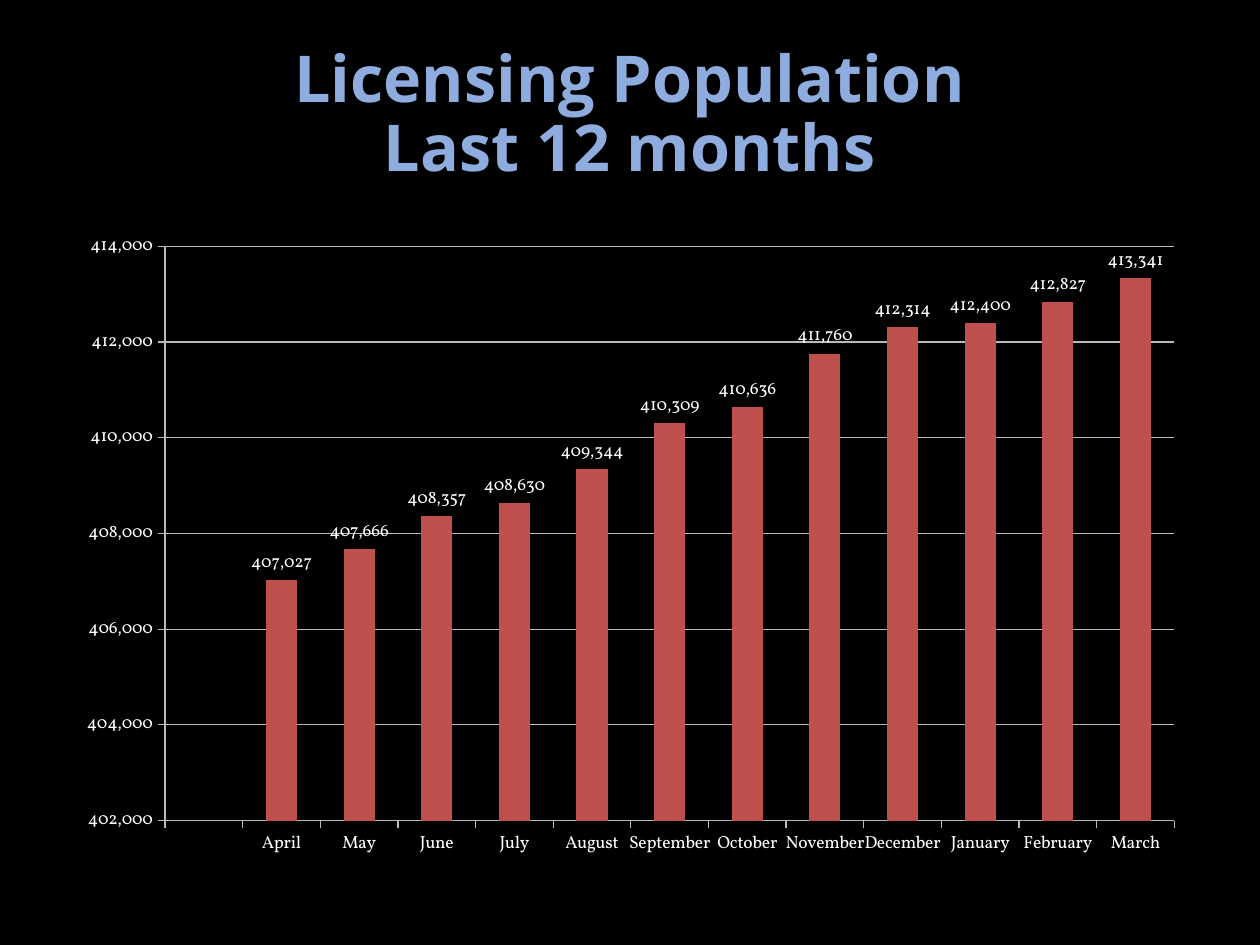
from lxml import etree
from pptx import Presentation
from pptx.chart.data import CategoryChartData
from pptx.dml.color import RGBColor
from pptx.enum.chart import XL_CHART_TYPE, XL_LABEL_POSITION, XL_TICK_MARK
from pptx.enum.text import MSO_ANCHOR, MSO_AUTO_SIZE, PP_ALIGN
from pptx.oxml.ns import qn
from pptx.util import Inches, Pt

COLUMNS = XL_CHART_TYPE.COLUMN_CLUSTERED
ABOVE_BAR = XL_LABEL_POSITION.OUTSIDE_END
TICK_OUT, TICK_NONE = XL_TICK_MARK.OUTSIDE, XL_TICK_MARK.NONE
MIDDLE, CENTER = MSO_ANCHOR.MIDDLE, PP_ALIGN.CENTER
NO_AUTOFIT = MSO_AUTO_SIZE.NONE

COLORS = {"background": "000000", "title": "8FACDE", "text": "FFFFFF",
          "line": "B9B9B9", "bar": "C0504D"}
TITLE_FONT, CHART_FONT = "Open Sans", "Vollkorn"
NUMBER_FORMAT = "#,##0"
TITLE_ONLY = 5
WIDTH, HEIGHT = Inches(10), Inches(7.5)

TITLE_BOX = (Inches(0.5), Inches(0.3), Inches(9), Inches(1.25))
CHART_BOX = (Inches(0.5), Inches(1.75), Inches(9), Inches(5.15))
# Inner plot area as shares of the chart box
PLOT_SHARES = {"x": 0.09, "y": 0.04, "w": 0.89, "h": 0.885}

# The first category is an empty slot before April
POPULATION = {
    "": None, "April": 407027, "May": 407666, "June": 408357,
    "July": 408630, "August": 409344, "September": 410309,
    "October": 410636, "November": 411760, "December": 412314,
    "January": 412400, "February": 412827, "March": 413341,
}


def color(name):
    return RGBColor.from_string(COLORS[name])


def style_font(font, name, size, color_name, bold=False):
    font.name, font.size, font.bold = name, Pt(size), bold
    font.color.rgb = color(color_name)


def style_line(line):
    line.color.rgb = color("line")
    line.width = Pt(0.75)


def add_title(page, box, text):
    title = page.shapes.title
    title.left, title.top, title.width, title.height = box
    frame = title.text_frame
    frame.auto_size = NO_AUTOFIT
    frame.word_wrap = True
    frame.vertical_anchor = MIDDLE
    frame.text = text
    para = frame.paragraphs[0]
    para.alignment = CENTER
    para.line_spacing = 0.89
    style_font(para.font, TITLE_FONT, 36.9, "title", bold=True)


def place_plot(chart, shares):
    """Fix the inner plot area inside the chart box."""
    plot_area = chart.plots[0]._element.getparent()
    for old in plot_area.findall(qn("c:layout")):
        plot_area.remove(old)
    layout = etree.Element(qn("c:layout"))
    plot_area.insert(0, layout)
    manual = etree.SubElement(layout, qn("c:manualLayout"))
    settings = {"layoutTarget": "inner", "xMode": "edge", "yMode": "edge", **shares}
    for tag, value in settings.items():
        etree.SubElement(manual, qn(f"c:{tag}")).set("val", str(value))


def add_population_chart(page, box, population):
    data = CategoryChartData(number_format=NUMBER_FORMAT)
    data.categories = list(population)
    data.add_series("Series 1", list(population.values()))
    chart = page.shapes.add_chart(COLUMNS, *box, data).chart
    chart.has_legend = False
    chart.has_title = False
    style_font(chart.font, CHART_FONT, 10, "text")
    place_plot(chart, PLOT_SHARES)

    # Axes
    for axis in (chart.category_axis, chart.value_axis):
        axis.major_tick_mark = TICK_OUT
        axis.minor_tick_mark = TICK_NONE
        style_line(axis.format.line)
        style_font(axis.tick_labels.font, CHART_FONT, 10, "text")
    values = chart.value_axis
    values.minimum_scale, values.maximum_scale = 402000, 414000
    values.major_unit = 2000
    values.has_major_gridlines = True
    style_line(values.major_gridlines.format.line)
    values.tick_labels.number_format = NUMBER_FORMAT
    values.tick_labels.number_format_is_linked = False

    # Bars and their values
    plot = chart.plots[0]
    plot.gap_width = 150
    plot.vary_by_categories = False
    series = plot.series[0]
    series.format.fill.solid()
    series.format.fill.fore_color.rgb = color("bar")
    labels = series.data_labels
    labels.show_value = True
    labels.position = ABOVE_BAR
    labels.number_format = NUMBER_FORMAT
    labels.number_format_is_linked = False
    style_font(labels.font, CHART_FONT, 10, "text")


def main():
    deck = Presentation()
    deck.slide_width, deck.slide_height = WIDTH, HEIGHT
    page = deck.slides.add_slide(deck.slide_layouts[TITLE_ONLY])
    page.background.fill.solid()
    page.background.fill.fore_color.rgb = color("background")
    add_title(page, TITLE_BOX, "Licensing Population\vLast 12 months")
    add_population_chart(page, CHART_BOX, POPULATION)
    deck.save("out.pptx")


if __name__ == "__main__":
    main()
